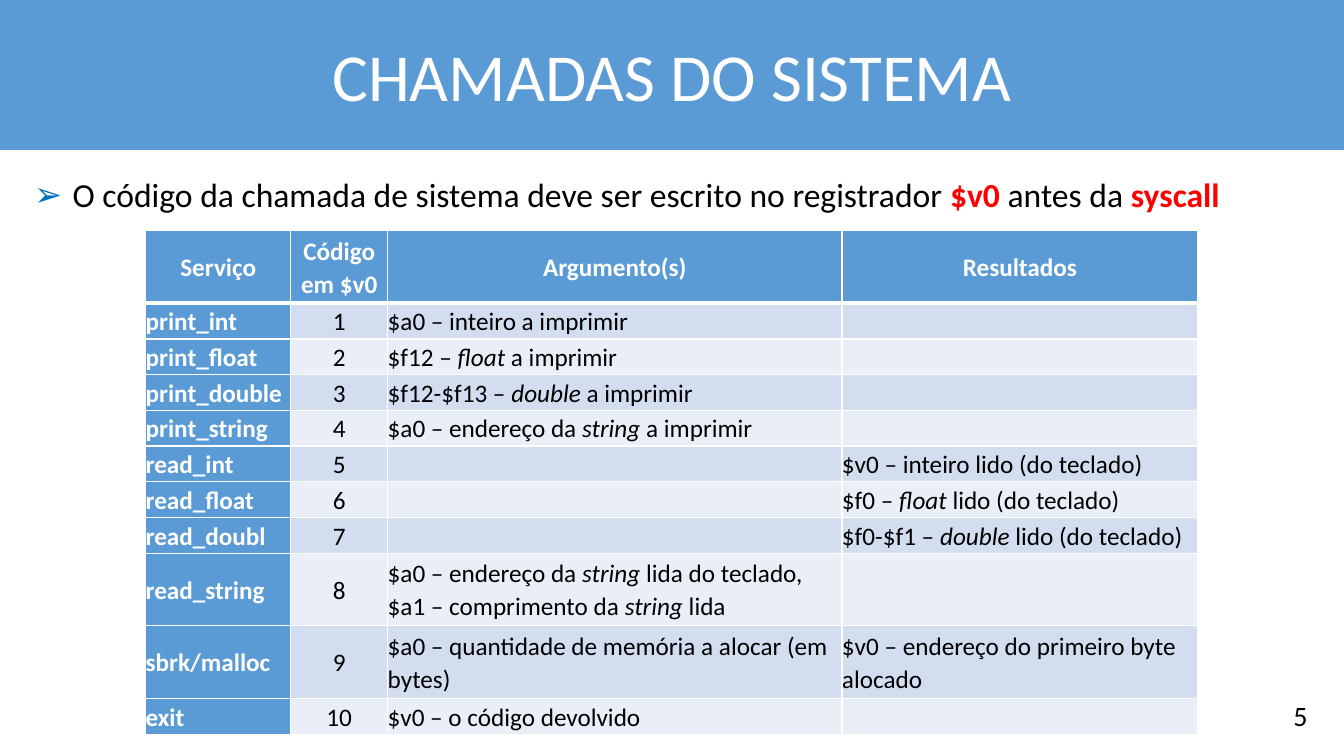
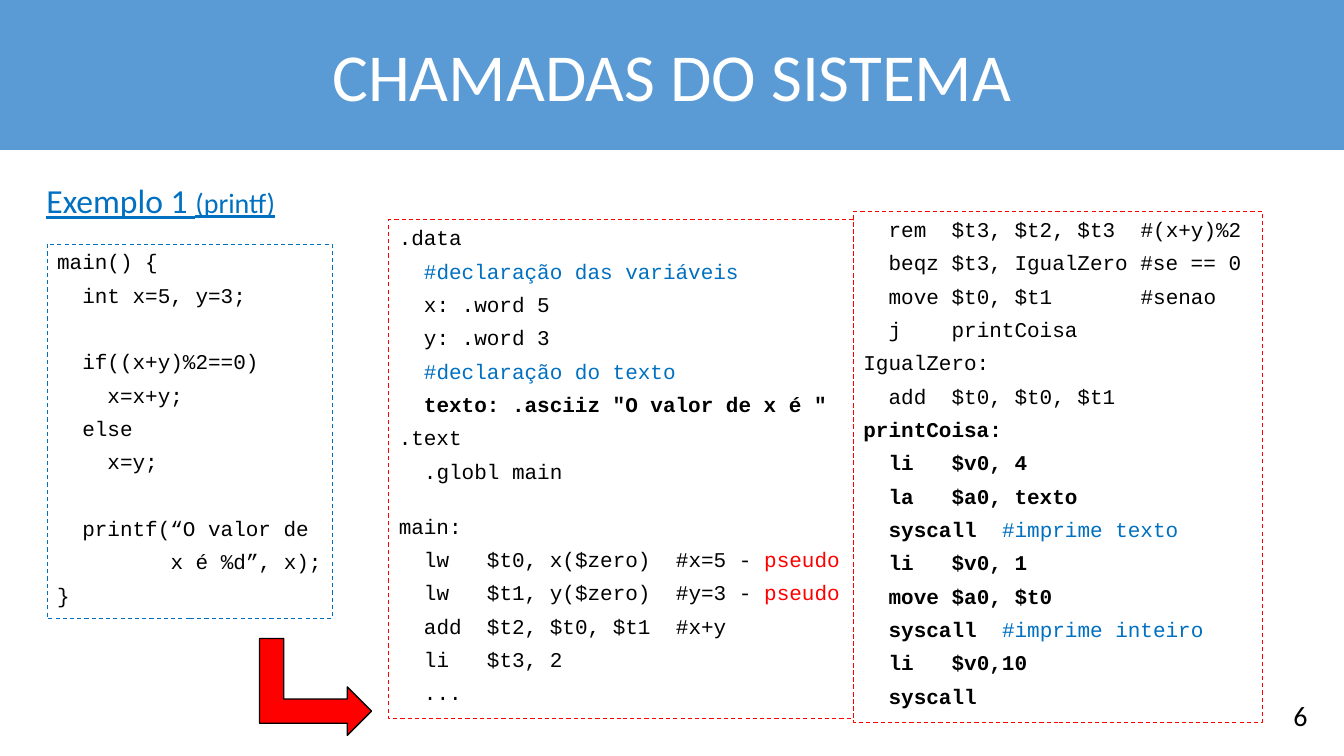
import dataclasses

import pptx
import pptx.dml.color
import pptx.enum.dml
import pptx.enum.shapes
import pptx.enum.text
import pptx.oxml
import pptx.oxml.ns
import pptx.util
from lxml import etree

Cm, Pt = pptx.util.Cm, pptx.util.Pt
Align = pptx.enum.text.PP_ALIGN
Anchor = pptx.enum.text.MSO_ANCHOR
Shape = pptx.enum.shapes.MSO_SHAPE


@dataclasses.dataclass(frozen=True)
class Theme:
    band: str = "5B9BD5"
    stripes: tuple = ("D2DEEF", "EAEFF7")
    white: str = "FFFFFF"
    black: str = "000000"
    blue: str = "0070C0"
    red: str = "FF0000"
    font: str = "Calibri"
    mono: str = "Courier New"
    title: float = 48
    body: float = 24
    small: float = 20
    table: float = 18
    code: float = 15
    code_gap: float = 5.8
    code_line: float = 23.8


THEME = Theme()
BOLD = dict(bold=True)
ITALIC = dict(italic=True)
RED = dict(color=THEME.red)
BLUE = dict(color=THEME.blue)
RED_BOLD = RED | BOLD

TITLE = "CHAMADAS DO SISTEMA"
FLOAT, DOUBLE, STRING = (("float", ITALIC), ("double", ITALIC), ("string", ITALIC))

HEADERS = ["Serviço", "Código em $v0", "Argumento(s)", "Resultados"]
# Service, arguments, results; the code is the position in the list
SERVICES = [
    ("print_int", ["$a0 – inteiro a imprimir"], []),
    ("print_float", ["$f12 – ", FLOAT, " a imprimir"], []),
    ("print_double", ["$f12-$f13 – ", DOUBLE, " a imprimir"], []),
    ("print_string", ["$a0 – endereço da ", STRING, " a imprimir"], []),
    ("read_int", [], ["$v0 – inteiro lido (do teclado)"]),
    ("read_float", [], ["$f0 – ", FLOAT, " lido (do teclado)"]),
    ("read_doubl", [], ["$f0-$f1 – ", DOUBLE, " lido (do teclado)"]),
    ("read_string", ["$a0 – endereço da ", STRING,
                     " lida do teclado, $a1 – comprimento da ", STRING, " lida"], []),
    ("sbrk/malloc", ["$a0 – quantidade de memória a alocar (em bytes)"],
     ["$v0 – endereço do primeiro byte alocado"]),
    ("exit", ["$v0 – o código devolvido"], []),
]
COLUMN_WIDTHS = [3.66, 2.44, 11.45, 8.97]
ROW_HEIGHT, TALL_ROW_HEIGHT = 0.9, 1.83
TALL_ROWS = (0, 8, 9)

# Code lines: indent in characters, spans, and optional layout:
# skip is extra height above in points, tab is the tab grid in characters
SKIP_LINE = dict(skip=THEME.code_line)
WIDE_TAB = dict(tab=11)
C_CODE = [
    (0, ["main() {"]),
    (2, ["int x=5, y=3;"]),
    (2, ["if((x+y)%2==0)"], SKIP_LINE),
    (4, ["x=x+y;"]),
    (2, ["else"]),
    (4, ["x=y;"]),
    (2, ["printf(“O valor de"], SKIP_LINE),
    (9, ["x é %d”, x);"]),
    (0, ["}"]),
]
DATA_CODE = [
    (0, [".data"]),
    (2, [("#declaração das variáveis", BLUE)]),
    (2, ["x: .word 5"]),
    (2, ["y: .word 3"]),
    (2, [("#declaração do texto", BLUE)]),
    (2, [('texto: .asciiz "O valor de x é "', BOLD)]),
    (0, [".text"]),
    (2, [".globl main"]),
    (0, ["main:"], dict(skip=15.5)),
    (2, ["lw\t$t0, x($zero)\t #x=5 - ", ("pseudo", RED)]),
    (2, ["lw\t$t1, y($zero)\t #y=3 - ", ("pseudo", RED)]),
    (2, ["add\t$t2, $t0, $t1\t #x+y"]),
    (2, ["li\t$t3, 2"]),
    (2, ["..."]),
]
PRINT_CODE = [
    (2, ["rem\t$t3, $t2, $t3\t #(x+y)%2"]),
    (2, ["beqz\t$t3, IgualZero #se == 0"]),
    (2, ["move\t$t0, $t1\t #senao"]),
    (2, ["j\tprintCoisa"]),
    (0, ["IgualZero:"]),
    (2, ["add\t$t0, $t0, $t1"]),
    (0, [("printCoisa:", BOLD)]),
    (2, [("li\t$v0, 4", BOLD)]),
    (2, [("la\t$a0, texto", BOLD)]),
    (2, [("syscall\t", BOLD), ("#imprime texto", BLUE)], WIDE_TAB),
    (2, [("li\t$v0, 1", BOLD)]),
    (2, [("move\t$a0, $t0", BOLD)]),
    (2, [("syscall\t", BOLD), ("#imprime inteiro", BLUE)], WIDE_TAB),
    (2, [("li\t$v0,10", BOLD)]),
    (2, [("syscall", BOLD)]),
]


def rgb(value):
    return pptx.dml.color.RGBColor.from_string(value)


def add_xml(parent, tag, **attributes):
    return etree.SubElement(parent, pptx.oxml.ns.qn(tag),
                            {key: str(value) for key, value in attributes.items()})


def write(para, text, size=THEME.body, color=THEME.black, font=THEME.font,
          bold=False, italic=False, underline=False):
    span = para.add_run()
    span.text = text
    span.font.size = Pt(size)
    span.font.name = font
    span.font.color.rgb = rgb(color)
    span.font.bold = bold
    span.font.italic = italic
    span.font.underline = underline


def write_spans(para, spans, **base):
    """Write plain strings in the base format and (text, format) pairs on top of it."""
    for part in spans:
        text, extra = (part, {}) if isinstance(part, str) else part
        write(para, text, **(base | extra))


def border_cell(cell, top=1, bottom=1):
    properties = cell._tc.get_or_add_tcPr()
    widths = {"a:lnL": 1, "a:lnR": 1, "a:lnT": top, "a:lnB": bottom}
    for position, (tag, width) in enumerate(widths.items()):
        line = add_xml(properties, tag, w=Pt(width))
        add_xml(add_xml(line, "a:solidFill"), "a:srgbClr", val=THEME.white)
        properties.insert(position, line)


class SlideWriter:
    """Adds styled elements to the current slide of a deck."""

    def __init__(self, deck, theme):
        self.deck = deck
        self.theme = theme
        self.page = None

    def start(self, title, number):
        theme = self.theme
        self.page = self.deck.slides.add_slide(self.deck.slide_layouts[5])
        band = self.page.shapes.title
        band.left = band.top = 0
        band.width, band.height = self.deck.slide_width, Cm(3.78)
        band.fill.solid()
        band.fill.fore_color.rgb = rgb(theme.band)
        frame = band.text_frame
        frame.margin_left = frame.margin_right = Cm(2.03)
        frame.vertical_anchor = Anchor.MIDDLE
        frame.paragraphs[0].alignment = Align.CENTER
        write(frame.paragraphs[0], title, size=theme.title, color=theme.white)
        self.text(31.19, 17.48, 2.01, 1.12, [str(number)], size=theme.small).alignment = Align.RIGHT

    def text(self, left, top, width, height, spans, **base):
        box = self.page.shapes.add_textbox(Cm(left), Cm(top), Cm(width), Cm(height))
        box.text_frame.word_wrap = True
        para = box.text_frame.paragraphs[0]
        write_spans(para, spans, **base)
        return para

    def bullet(self, left, top, width, height, spans):
        para = self.text(left, top, width, height, spans)
        properties = para._p.get_or_add_pPr()
        properties.set("marL", str(Cm(0.97)))
        properties.set("indent", str(-Cm(0.97)))
        add_xml(add_xml(properties, "a:buClr"), "a:srgbClr", val=self.theme.blue)
        add_xml(properties, "a:buFont", typeface=self.theme.font)
        add_xml(properties, "a:buChar", char="➢")

    def shape(self, kind, left, top, width, height, line, weight, fill=None):
        box = self.page.shapes.add_shape(kind, Cm(left), Cm(top), Cm(width), Cm(height))
        box.shadow.inherit = False
        box.line.color.rgb = rgb(line)
        box.line.width = Pt(weight)
        if fill:
            box.fill.solid()
            box.fill.fore_color.rgb = rgb(fill)
        else:
            box.fill.background()
        return box

    def code(self, left, top, width, height, lines, color):
        box = self.shape(Shape.RECTANGLE, left, top, width, height, color, 0.75)
        box.line.dash_style = pptx.enum.dml.MSO_LINE.DASH
        frame = box.text_frame
        frame.word_wrap = True
        frame.vertical_anchor = Anchor.TOP
        frame.margin_right = 0
        for index, (indent, spans, *layout) in enumerate(lines):
            para = frame.add_paragraph() if index else frame.paragraphs[0]
            self.code_line(para, indent, spans, **(layout[0] if layout else {}))

    def code_line(self, para, indent, spans, skip=0, tab=7):
        theme = self.theme
        character = Pt(theme.code * 0.6)
        para.alignment = Align.LEFT
        para.space_before = Pt(theme.code_gap + skip)
        properties = para._p.get_or_add_pPr()
        properties.set("marL", "0")
        properties.set("indent", str(indent * character))
        properties.set("defTabSz", str(tab * character))
        write_spans(para, spans, size=theme.code, font=theme.mono)

    def table(self, left, top, widths, heights, rows):
        """Fill a table whose first row and first column are headings."""
        theme = self.theme
        grid = self.page.shapes.add_table(len(rows), len(widths), Cm(left), Cm(top),
                                          Cm(sum(widths)), Cm(sum(heights))).table
        for column, width in zip(grid.columns, widths):
            column.width = Cm(width)
        for row_index, (row, height) in enumerate(zip(rows, heights)):
            grid.rows[row_index].height = Cm(height)
            for column_index, spans in enumerate(row):
                heading = row_index == 0 or column_index == 0
                cell = grid.cell(row_index, column_index)
                cell.margin_left = cell.margin_right = cell.margin_top = cell.margin_bottom = 0
                cell.vertical_anchor = Anchor.MIDDLE
                cell.fill.solid()
                cell.fill.fore_color.rgb = rgb(
                    theme.band if heading else theme.stripes[(row_index - 1) % 2])
                border_cell(cell, top=3 if row_index == 1 else 1,
                            bottom=3 if row_index == 0 else 1)
                para = cell.text_frame.paragraphs[0]
                para.line_spacing = 1.07
                centred = row_index == 0 or column_index == 1
                para.alignment = Align.CENTER if centred else Align.LEFT
                write_spans(para, spans, size=theme.table, bold=heading,
                            color=theme.white if heading else theme.black)


def services_slide(writer):
    writer.start(TITLE, 5)
    writer.bullet(0.61, 4.27, 31.67, 1.27, [
        "O código da chamada de sistema deve ser escrito no registrador ",
        ("$v0 ", RED_BOLD), "antes da ", ("syscall", RED_BOLD)])
    rows = [[[header] for header in HEADERS]]
    for code, (service, arguments, results) in enumerate(SERVICES, start=1):
        rows.append([[service], [str(code)], arguments, results])
    heights = [TALL_ROW_HEIGHT if index in TALL_ROWS else ROW_HEIGHT
               for index in range(len(rows))]
    writer.table(3.67, 5.81, COLUMN_WIDTHS, heights, rows)


def example_slide(writer):
    theme = writer.theme
    writer.start(TITLE, 6)
    writer.code(1.19, 6.15, 7.18, 9.44, C_CODE, theme.blue)
    writer.code(9.8, 5.54, 11.71, 12.57, DATA_CODE, theme.red)
    writer.code(21.51, 5.33, 10.31, 12.87, PRINT_CODE, theme.red)
    arrow = writer.shape(Shape.BENT_UP_ARROW, 6.73, 15.9, 2.44, 2.82,
                         theme.black, 1, fill=theme.red)
    arrow.rotation = 90
    writer.text(0.92, 4.42, 28.4, 1.27, ["Exemplo 1 ", ("(printf)", dict(size=theme.small))],
                color=theme.blue, underline=True)


def main():
    deck = pptx.Presentation()
    deck.slide_width, deck.slide_height = Cm(33.87), Cm(19.05)
    writer = SlideWriter(deck, THEME)
    services_slide(writer)
    example_slide(writer)
    deck.save("out.pptx")


if __name__ == "__main__":
    main()
